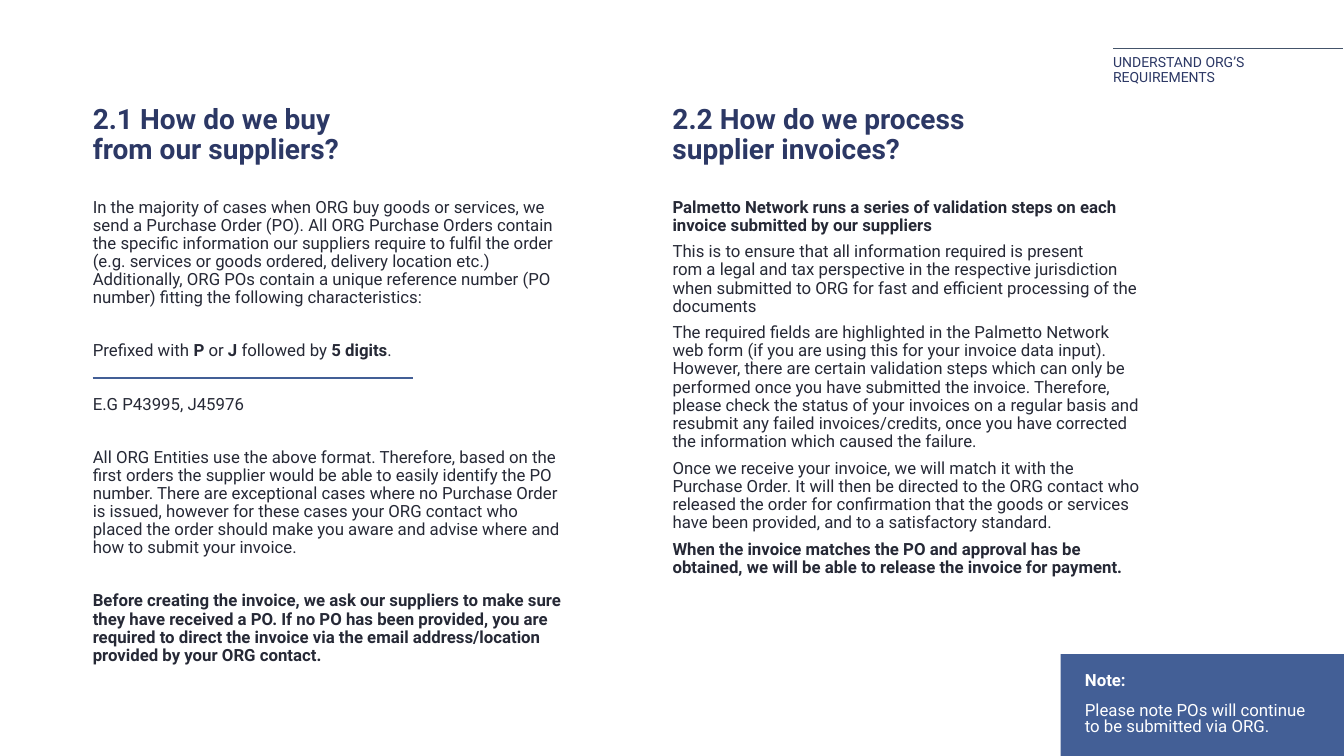
from dataclasses import dataclass
from typing import NamedTuple

from lxml import etree
from pptx import Presentation
from pptx.dml.color import RGBColor
from pptx.enum.shapes import MSO_CONNECTOR, MSO_SHAPE
from pptx.enum.text import MSO_ANCHOR, MSO_AUTO_SIZE, PP_ALIGN
from pptx.oxml.ns import qn
from pptx.util import Inches, Pt

STRAIGHT = MSO_CONNECTOR.STRAIGHT
RECTANGLE = MSO_SHAPE.RECTANGLE
TOP, MIDDLE = MSO_ANCHOR.TOP, MSO_ANCHOR.MIDDLE
LEFT = PP_ALIGN.LEFT
NO_AUTOFIT = MSO_AUTO_SIZE.NONE
TITLE_ONLY = 5


@dataclass(frozen=True)
class Theme:
    font: str = "Roboto"
    navy: RGBColor = RGBColor(0x2C, 0x38, 0x65)
    ink: RGBColor = RGBColor(0x26, 0x29, 0x36)
    blue: RGBColor = RGBColor(0x43, 0x5F, 0x96)
    slate: RGBColor = RGBColor(0x44, 0x54, 0x6A)
    white: RGBColor = RGBColor(0xFF, 0xFF, 0xFF)
    heading_size: int = 20
    body_size: int = 12
    label_size: int = 10
    line_spacing: float = 0.9
    paragraph_gap: int = 6
    section_gap: int = 25


THEME = Theme()


class Box(NamedTuple):
    """Position and size in inches."""
    left: float
    top: float
    width: float
    height: float


SLIDE = Box(0, 0, 13.33, 7.5)
COLUMN_TOP, COLUMN_WIDTH, HEADING_HEIGHT = 0.7, 4.68, 1.28
COLUMN_HEIGHT = 4.0
LEFT_COLUMN = Box(0.92, COLUMN_TOP, COLUMN_WIDTH, COLUMN_HEIGHT)
RIGHT_COLUMN = Box(6.67, COLUMN_TOP, COLUMN_WIDTH, COLUMN_HEIGHT)
RUNNING_LABEL = Box(11.04, 0.48, 2.28, 0.39)
NOTE = Box(10.52, 6.49, 2.81, 1.01)

# Asterisks enclose bold words; the number is the space before in points.
BUYING = [
    ("In the majority of cases when ORG buy goods or services, we send a Purchase Order (PO). "
     "All ORG Purchase Orders contain the specific information our suppliers require to fulfil "
     "the order (e.g. services or goods ordered, delivery location etc.) Additionally, ORG POs "
     "contain a unique reference number (PO number) fitting the following characteristics:",
     THEME.paragraph_gap),
    ("Prefixed with *P* or *J* followed by *5 digits*.", THEME.section_gap),
    ("E.G P43995, J45976", THEME.section_gap),
    ("All ORG Entities use the above format. Therefore, based on the first orders the supplier "
     "would be able to easily identify the PO number. There are exceptional cases where no "
     "Purchase Order is issued, however for these cases your ORG contact who placed the order "
     "should make you aware and advise where and how to submit your invoice.", THEME.section_gap),
    ("*Before creating the invoice, we ask our suppliers to make sure they have received a PO. "
     "If no PO has been provided, you are required to direct the invoice via the email "
     "address/location provided by your ORG contact.*", THEME.section_gap),
]
PROCESSING = [(text, THEME.paragraph_gap) for text in (
    "*Palmetto Network runs a series of validation steps on each invoice submitted by our "
    "suppliers*",
    "This is to ensure that all information required is present\n"
    "rom a legal and tax perspective in the respective jurisdiction\n"
    "when submitted to ORG for fast and efficient processing of the documents",
    "The required fields are highlighted in the Palmetto Network web form (if you are using this "
    "for your invoice data input). However, there are certain validation steps which can only be "
    "performed once you have submitted the invoice. Therefore, please check the status of your "
    "invoices on a regular basis and resubmit any failed invoices/credits, once you have "
    "corrected the information which caused the failure.",
    "Once we receive your invoice, we will match it with the Purchase Order. It will then be "
    "directed to the ORG contact who released the order for confirmation that the goods or "
    "services have been provided, and to a satisfactory standard.",
    "*When the invoice matches the PO and approval has be obtained, we will be able to release "
    "the invoice for payment.*",
)]


def place(shape, box):
    shape.left, shape.top, shape.width, shape.height = map(Inches, box)


def set_frame(shape, anchor, inset=0):
    frame = shape.text_frame
    frame.word_wrap = True
    frame.auto_size = NO_AUTOFIT
    frame.vertical_anchor = anchor
    frame.margin_left = frame.margin_right = Inches(inset)
    frame.margin_top = frame.margin_bottom = Inches(inset)
    return frame


def add_marked_text(paragraph, text):
    """Add runs, with the words between asterisks in bold."""
    for index, piece in enumerate(text.split("*")):
        for number, line in enumerate(piece.split("\n")):
            if number:
                paragraph.add_line_break()
            if line:
                run = paragraph.add_run()
                run.text = line
                run.font.bold = index % 2 == 1


def write(frame, entries, size, color, line_spacing=THEME.line_spacing, space_after=0):
    for index, (text, space_before) in enumerate(entries):
        paragraph = frame.add_paragraph() if index else frame.paragraphs[0]
        add_marked_text(paragraph, text)
        paragraph.alignment = LEFT
        paragraph.line_spacing = line_spacing
        paragraph.space_before = Pt(space_before)
        paragraph.space_after = Pt(space_after)
        for run in paragraph.runs:
            run.font.name = THEME.font
            run.font.size = Pt(size)
            run.font.color.rgb = color


def add_text_box(slide, box):
    return slide.shapes.add_textbox(*map(Inches, box))


def add_rule(slide, left, top, width, color, weight):
    rule = slide.shapes.add_connector(
        STRAIGHT, Inches(left), Inches(top), Inches(left + width), Inches(top))
    rule.line.color.rgb = color
    rule.line.width = Pt(weight)
    etree.SubElement(rule._element.spPr, qn("a:effectLst"))


def add_running_label(slide, box):
    add_rule(slide, box.left, box.top, box.width, THEME.slate, 0.5)
    label = add_text_box(slide, Box(box.left, box.top + 0.04, 2.11, box.height - 0.04))
    write(set_frame(label, MIDDLE), [("UNDERSTAND ORG’S REQUIREMENTS", THEME.paragraph_gap)],
          THEME.label_size, THEME.navy)


def add_column(slide, box, heading_shape, heading, heading_width, entries):
    place(heading_shape, Box(box.left, box.top, heading_width, HEADING_HEIGHT))
    write(set_frame(heading_shape, MIDDLE), [(f"*{heading}*", THEME.paragraph_gap)],
          THEME.heading_size, THEME.navy)
    body = add_text_box(slide, Box(box.left, box.top + HEADING_HEIGHT - 0.01,
                                   box.width, box.height - HEADING_HEIGHT + 0.01))
    write(set_frame(body, TOP), entries, THEME.body_size, THEME.ink)


def add_note(slide, box):
    note = slide.shapes.add_shape(RECTANGLE, *map(Inches, box))
    note.shadow.inherit = False
    note.fill.solid()
    note.fill.fore_color.rgb = THEME.blue
    note.line.fill.background()
    entries = [("*Note:*", 0), ("Please note POs will continue to be submitted via ORG.", 0)]
    write(set_frame(note, MIDDLE, 0.24), entries, THEME.body_size, THEME.white,
          line_spacing=Pt(11.1), space_after=10)


def build_slide(presentation):
    slide = presentation.slides.add_slide(presentation.slide_layouts[TITLE_ONLY])
    add_running_label(slide, RUNNING_LABEL)
    add_column(slide, LEFT_COLUMN, slide.shapes.title,
               "2.1 How do we buy from our suppliers?", 2.84, BUYING)
    add_rule(slide, LEFT_COLUMN.left, SLIDE.height / 2, 3.18, THEME.blue, 1)
    add_column(slide, RIGHT_COLUMN, add_text_box(slide, RIGHT_COLUMN),
               "2.2 How do we process supplier invoices?", 3.94, PROCESSING)
    add_note(slide, NOTE)


def main():
    presentation = Presentation()
    presentation.slide_width = Inches(SLIDE.width)
    presentation.slide_height = Inches(SLIDE.height)
    build_slide(presentation)
    presentation.save("out.pptx")


if __name__ == "__main__":
    main()
